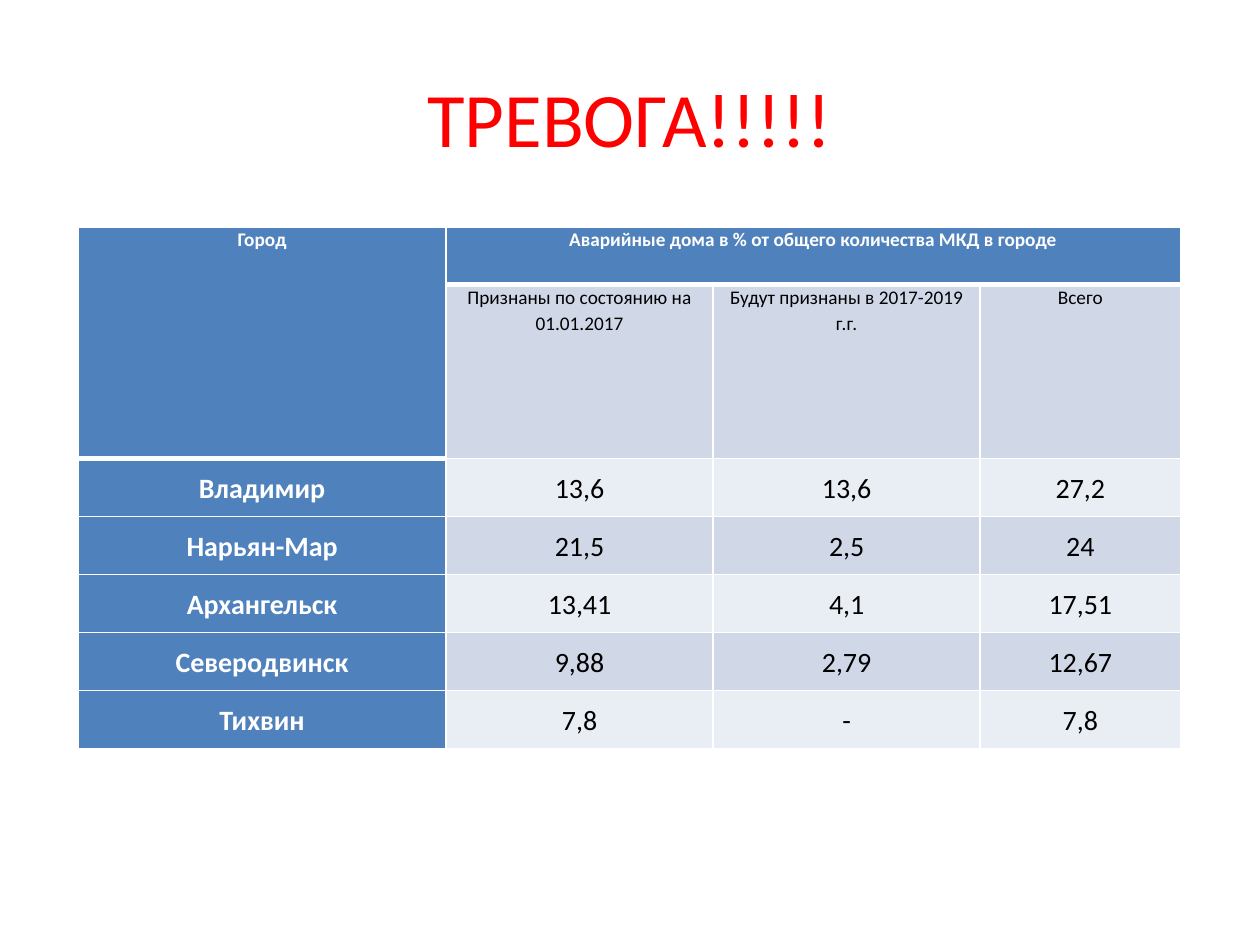
"""Build a slide tabulating the share of unsafe apartment buildings by city."""
from dataclasses import dataclass

from lxml.etree import SubElement
from pptx import Presentation
from pptx.dml.color import RGBColor as RGB
from pptx.enum.text import MSO_ANCHOR as Anchor, PP_ALIGN as Align
from pptx.oxml.ns import qn
from pptx.slide import Slide
from pptx.table import Table, _Cell as Cell
from pptx.text.text import _Paragraph as Paragraph
from pptx.util import Inches, Pt


@dataclass(frozen=True)
class Theme:
    font: str = "Calibri"
    alarm: RGB = RGB(0xFF, 0x00, 0x00)
    ink: RGB = RGB(0x00, 0x00, 0x00)
    white: RGB = RGB(0xFF, 0xFF, 0xFF)
    header: RGB = RGB(0x4F, 0x81, 0xBD)
    dark_band: RGB = RGB(0xD0, 0xD8, 0xE8)
    light_band: RGB = RGB(0xE9, 0xED, 0xF4)
    title_size: float = 44
    header_size: float = 11
    body_size: float = 16
    thin: float = 1
    thick: float = 3


@dataclass(frozen=True)
class CityShare:
    city: str
    recognised: str
    planned: str
    total: str


THEME = Theme()
TITLE = "ТРЕВОГА!!!!!"
HEADINGS = (
    ("Город", "Аварийные дома в % от общего количества МКД в городе", "", ""),
    ("", "Признаны по состоянию на 01.01.2017", "Будут признаны в 2017-2019 г.г.", "Всего"),
)
CITIES = (
    CityShare("Владимир", "13,6", "13,6", "27,2"),
    CityShare("Нарьян-Мар", "21,5", "2,5", "24"),
    CityShare("Архангельск", "13,41", "4,1", "17,51"),
    CityShare("Северодвинск", "9,88", "2,79", "12,67"),
    CityShare("Тихвин", "7,8", "-", "7,8"),
)
COLUMN_WIDTHS = (2.92, 2.12, 2.12, 1.59)
ROW_HEIGHTS = (0.46, 1.38) + (0.46,) * len(CITIES)


def write(paragraph: Paragraph, text: str, size: float, color: RGB, bold: bool = False) -> None:
    """Put centred text of one style in a paragraph."""
    paragraph.text = text
    paragraph.alignment = Align.CENTER
    font = paragraph.font
    font.name, font.size, font.bold = THEME.font, Pt(size), bold
    font.color.rgb = color


def add_title(slide: Slide) -> None:
    """Add the alarm heading."""
    frame = slide.shapes.add_textbox(Inches(0.5), Inches(0.3), Inches(9), Inches(1.25)).text_frame
    frame.word_wrap = True
    frame.vertical_anchor = Anchor.MIDDLE
    write(frame.paragraphs[0], TITLE, THEME.title_size, THEME.alarm)


def heading_edge(row: int, column: int) -> float:
    """Return the width of the rule below a cell."""
    last_heading = 1 if column == 0 else 0
    return THEME.thick if 0 <= row <= last_heading else THEME.thin


def add_borders(cell: Cell, row: int, column: int) -> None:
    """Draw white rules on the four sides of a cell."""
    widths = {
        "a:lnL": THEME.thin,
        "a:lnR": THEME.thin,
        "a:lnT": heading_edge(row - 1, column),
        "a:lnB": heading_edge(row, column),
    }
    properties = cell._tc.get_or_add_tcPr()
    for side, width in widths.items():
        line = SubElement(properties, qn(side), w=str(Pt(width)))
        SubElement(SubElement(line, qn("a:solidFill")), qn("a:srgbClr"), val=str(THEME.white))


def fill_cell(cell: Cell, row: int, column: int, text: str) -> None:
    """Style one cell by its place in the table and write its text."""
    is_heading = row < len(HEADINGS)
    is_header = row == 0 or column == 0
    band = THEME.dark_band if row % 2 else THEME.light_band
    add_borders(cell, row, column)
    cell.fill.solid()
    cell.fill.fore_color.rgb = THEME.header if is_header else band
    cell.margin_left = cell.margin_right = Inches(0.07)
    cell.margin_top = cell.margin_bottom = 0
    cell.vertical_anchor = Anchor.TOP if is_heading else Anchor.MIDDLE
    paragraph = cell.text_frame.paragraphs[0]
    paragraph.line_spacing = 1.07
    size = THEME.header_size if is_heading else THEME.body_size
    write(paragraph, text, size, THEME.white if is_header else THEME.ink, is_header)


def add_city_table(slide: Slide) -> Table:
    """Add the table of shares by city."""
    rows = HEADINGS + tuple((c.city, c.recognised, c.planned, c.total) for c in CITIES)
    table = slide.shapes.add_table(
        len(rows), len(COLUMN_WIDTHS), Inches(0.62), Inches(1.8),
        Inches(sum(COLUMN_WIDTHS)), Inches(sum(ROW_HEIGHTS)),
    ).table
    for column, width in zip(table.columns, COLUMN_WIDTHS):
        column.width = Inches(width)
    for table_row, height in zip(table.rows, ROW_HEIGHTS):
        table_row.height = Inches(height)
    for row, texts in enumerate(rows):
        for column, text in enumerate(texts):
            fill_cell(table.cell(row, column), row, column, text)
    table.cell(0, 0).merge(table.cell(1, 0))
    table.cell(0, 1).merge(table.cell(0, 3))
    return table


def main() -> None:
    """Create the presentation and save it."""
    presentation = Presentation()
    presentation.slide_width, presentation.slide_height = Inches(10), Inches(7.5)
    slide = presentation.slides.add_slide(presentation.slide_layouts[6])
    add_title(slide)
    add_city_table(slide)
    presentation.save("out.pptx")


if __name__ == "__main__":
    main()
